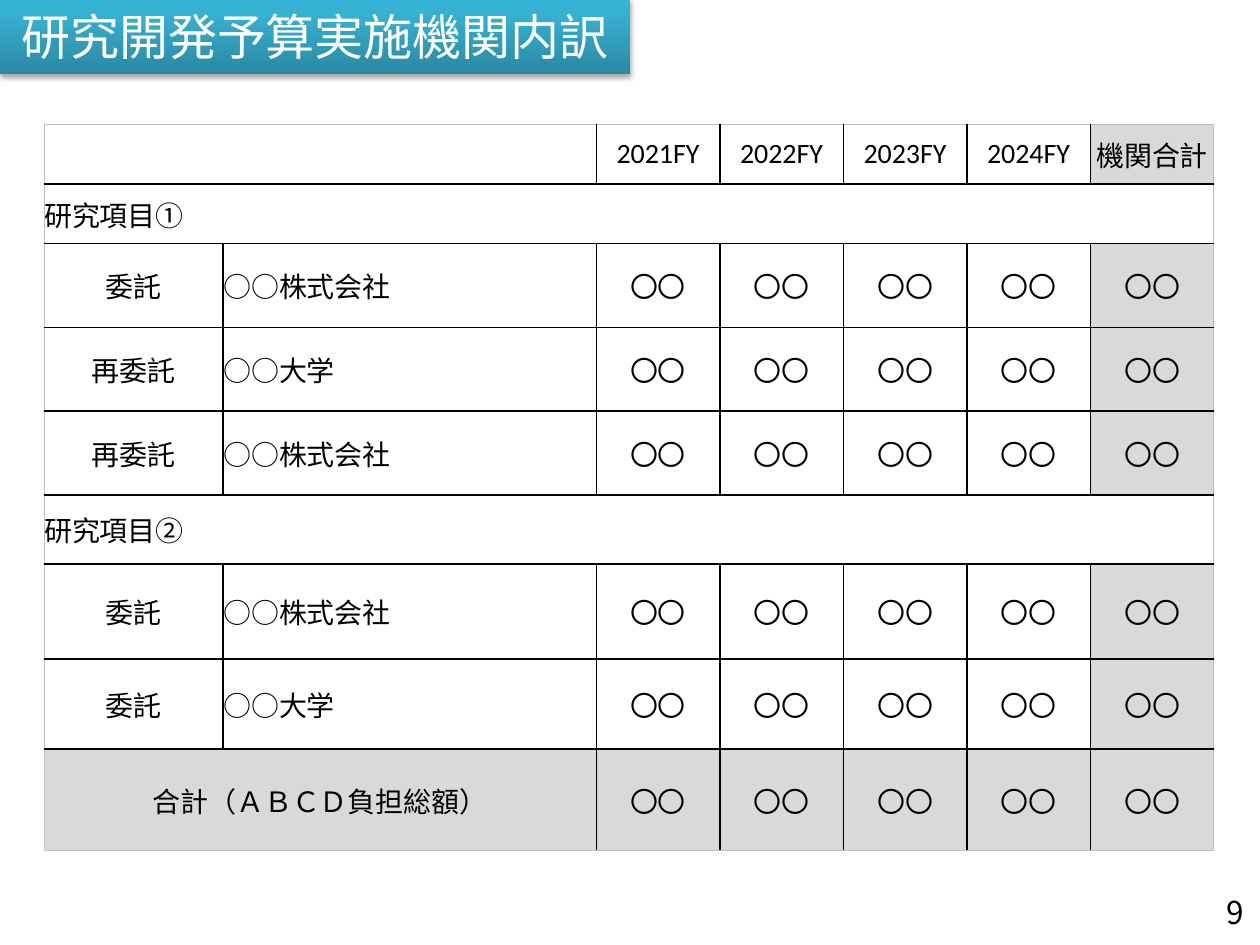
from lxml import etree
from pptx import Presentation
from pptx.dml.color import RGBColor
from pptx.enum.shapes import MSO_SHAPE
from pptx.enum.text import MSO_ANCHOR, PP_ALIGN
from pptx.oxml import parse_xml
from pptx.oxml.ns import nsdecls, qn
from pptx.util import Cm, Pt

RECTANGLE = MSO_SHAPE.RECTANGLE
MIDDLE = MSO_ANCHOR.MIDDLE
LEFT, CENTER, RIGHT = PP_ALIGN.LEFT, PP_ALIGN.CENTER, PP_ALIGN.RIGHT

COLORS = {
    "ink": "000000",
    "white": "FFFFFF",
    "total": "D9D9D9",
    "frame": "BFBFBF",
    "banner_bottom": "2A88A2",
    "banner_upper": "37B1D2",
    "banner_top": "34B4D6",
}
LATIN, JAPANESE = "Calibri", "Noto Sans CJK JP"

YEARS = ["2021FY", "2022FY", "2023FY", "2024FY"]
AMOUNT = "〇〇"
SECTIONS = [
    ("研究項目①", [("委託", "○○株式会社"), ("再委託", "○○大学"), ("再委託", "○○株式会社")]),
    ("研究項目②", [("委託", "○○株式会社"), ("委託", "○○大学")]),
]
COLUMN_WIDTHS = [3.61, 7.52] + [2.49] * 5
ROW_HEIGHTS = [1.2, 1.2, 1.69, 1.69, 1.69, 1.39, 1.92, 1.81, 2.05]


def write(frame, text, size, color, align, latin):
    """Put one styled paragraph into a text frame."""
    paragraph = frame.paragraphs[0]
    paragraph.text = text
    paragraph.alignment = align
    font = paragraph.font
    font.size = Pt(size)
    font.name = latin
    font.color.rgb = RGBColor.from_string(COLORS[color])
    east_asian = etree.SubElement(font._rPr, qn("a:ea"))
    east_asian.set("typeface", JAPANESE)


def add_banner(slide, left, top, width, height):
    """Draw the title banner with its gradient and soft shadow."""
    banner = slide.shapes.add_shape(RECTANGLE, Cm(left), Cm(top), Cm(width), Cm(height))
    banner.line.fill.background()
    banner.fill.gradient()
    banner.fill.gradient_angle = 90
    stops = banner._element.spPr.find(".//" + qn("a:gsLst"))
    stops.clear()
    for position, name in [(0, "banner_bottom"), (80, "banner_upper"), (100, "banner_top")]:
        stops.append(parse_xml(
            f'<a:gs {nsdecls("a")} pos="{position * 1000}"><a:srgbClr val="{COLORS[name]}"/></a:gs>'))
    banner._element.spPr.append(parse_xml(
        f'<a:effectLst {nsdecls("a")}><a:outerShdw blurRad="40000" dist="23000" dir="5400000" '
        f'rotWithShape="0"><a:srgbClr val="{COLORS["ink"]}"><a:alpha val="35000"/></a:srgbClr>'
        '</a:outerShdw></a:effectLst>'))
    banner.text_frame.vertical_anchor = MIDDLE
    banner.text_frame.word_wrap = True
    write(banner.text_frame, "研究開発予算実施機関内訳", 28, "white", CENTER, LATIN)


def budget_rows():
    """Return the rows of the budget table, with None for merged cells."""
    rows = [["", None, *YEARS, "機関合計"]]
    amounts = [AMOUNT] * (len(YEARS) + 1)
    for heading, members in SECTIONS:
        rows.append([heading] + [None] * (len(COLUMN_WIDTHS) - 1))
        rows += [[role, member, *amounts] for role, member in members]
    rows.append(["合計（ＡＢＣＤ負担総額）", None, *amounts])
    return rows


def draw_borders(cell, edges):
    """Add cell borders, given as pairs of side and colour name."""
    properties = cell._tc.get_or_add_tcPr()
    for side, color in edges:
        width = 12700 if color == "ink" else 6350
        properties.append(parse_xml(
            f'<a:ln{side} {nsdecls("a")} w="{width}"><a:solidFill>'
            f'<a:srgbClr val="{COLORS[color]}"/></a:solidFill></a:ln{side}>'))


def style_cell(cell, filled):
    """Give a cell its fill, zero margins and vertical centring."""
    if filled:
        cell.fill.solid()
        cell.fill.fore_color.rgb = RGBColor.from_string(COLORS["total"])
    else:
        cell.fill.background()
    cell.margin_left = cell.margin_right = cell.margin_top = cell.margin_bottom = 0
    cell.vertical_anchor = MIDDLE


def add_budget_table(slide, left, top):
    """Build the budget table by institution and fiscal year."""
    rows = budget_rows()
    last_row, last_column = len(rows) - 1, len(COLUMN_WIDTHS) - 1
    table = slide.shapes.add_table(
        len(rows), len(COLUMN_WIDTHS), Cm(left), Cm(top),
        Cm(sum(COLUMN_WIDTHS)), Cm(sum(ROW_HEIGHTS))).table
    table.first_row = table.horz_banding = False
    for column, width in zip(table.columns, COLUMN_WIDTHS):
        column.width = Cm(width)
    for row, height in zip(table.rows, ROW_HEIGHTS):
        row.height = Cm(height)

    for r, texts in enumerate(rows):
        is_section = texts.count(None) == last_column
        for c, text in enumerate(texts):
            cell = table.cell(r, c)
            span = 1
            while c + span <= last_column and texts[c + span] is None:
                span += 1
            edges = []
            if text is not None:
                edges.append(("L", "ink" if c else "frame"))
            if text is not None or c + span > last_column:
                edges.append(("R", "ink" if c + span <= last_column else "frame"))
            edges.append(("T", "ink" if r else "frame"))
            edges.append(("B", "ink" if r < last_row else "frame"))
            draw_borders(cell, edges)
            style_cell(cell, r == last_row or (c == last_column and not is_section))
            if text:
                is_name = is_section or (c == 1)
                write(cell.text_frame, text, 16, "ink", LEFT if is_name else CENTER,
                      LATIN if text in YEARS else JAPANESE)
            if text is not None and span > 1:
                cell.merge(table.cell(r, c + span - 1))


def add_page_number(slide, left, top, width, height):
    """Place the page number at the lower right."""
    frame = slide.shapes.add_textbox(Cm(left), Cm(top), Cm(width), Cm(height)).text_frame
    frame.margin_left = frame.margin_right = frame.margin_top = frame.margin_bottom = 0
    frame.vertical_anchor = MIDDLE
    frame.word_wrap = True
    write(frame, "9", 18, "ink", RIGHT, JAPANESE)


def main():
    """Build the budget slide and save it."""
    deck = Presentation()
    deck.slide_width, deck.slide_height = Cm(25.4), Cm(19.05)
    slide = deck.slides.add_slide(deck.slide_layouts[6])
    add_banner(slide, 0, -0.05, 12.7, 1.55)
    add_page_number(slide, 23.6, 18.06, 1.47, 0.64)
    add_budget_table(slide, 0.89, 2.51)
    deck.save("out.pptx")


if __name__ == "__main__":
    main()
